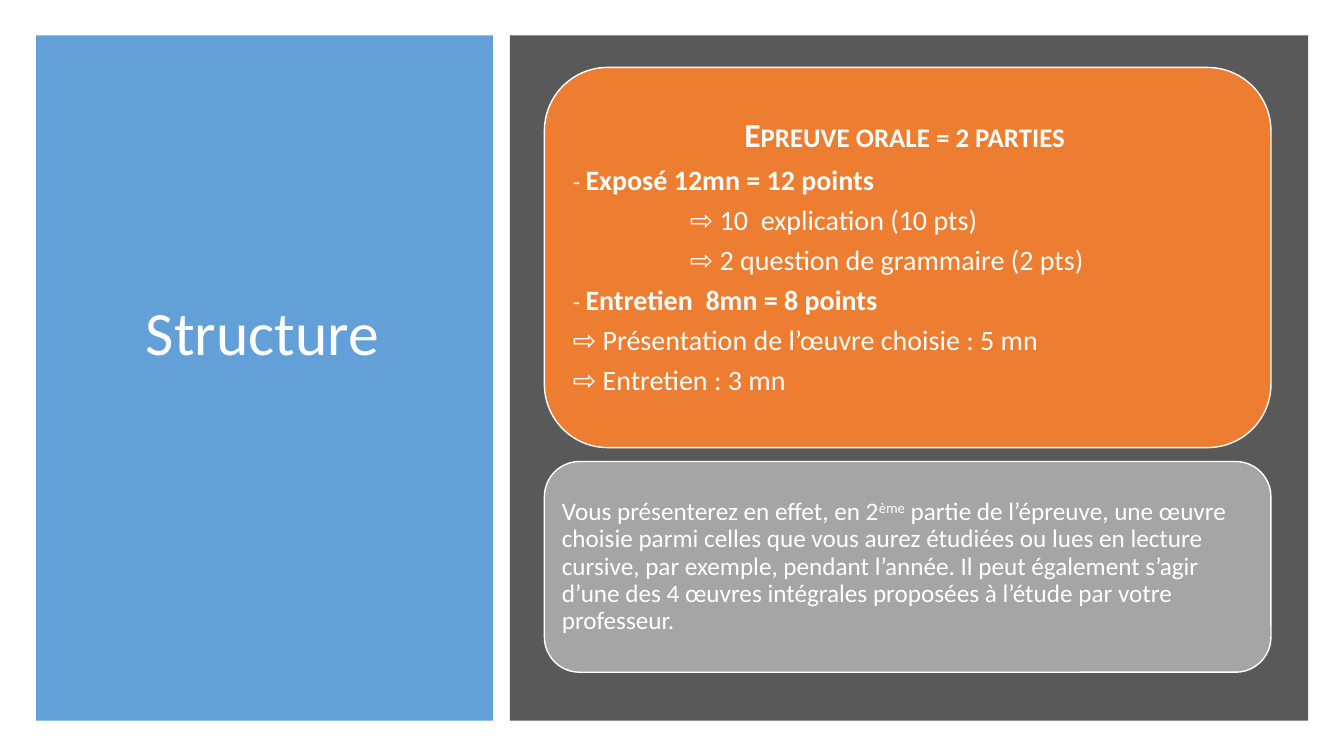
from pptx import Presentation
from pptx import util as u
from pptx.dml import color
from pptx.enum import shapes, text
from pptx.oxml import xmlchemy

COLORS = {
    "white": "FFFFFF",
    "blue": "5B9BD5",
    "dark": "595959",
    "orange": "ED7D31",
    "grey": "A5A5A5",
}


class SlideBuilder:
    font = "Calibri"
    line_spacing = 0.9

    def __init__(self, slide):
        self.slide = slide

    def rgb(self, name):
        return color.RGBColor.from_string(COLORS[name])

    def box(self, left, top, width, height, fill, rounded=False, opacity=None):
        kind = shapes.MSO_SHAPE.ROUNDED_RECTANGLE if rounded else shapes.MSO_SHAPE.RECTANGLE
        shape = self.slide.shapes.add_shape(
            kind, u.Cm(left), u.Cm(top), u.Cm(width), u.Cm(height))
        shape.shadow.inherit = False
        shape.fill.solid()
        shape.fill.fore_color.rgb = self.rgb(fill)
        if opacity is not None:
            alpha = xmlchemy.OxmlElement("a:alpha")
            alpha.set("val", str(opacity * 1000))
            shape.fill._xPr.solidFill[0].append(alpha)
        if rounded:
            shape.line.color.rgb = self.rgb("white")
            shape.line.width = u.Pt(1)
        else:
            shape.line.fill.background()
        return shape

    def label(self, left, top, width, height):
        return self.slide.shapes.add_textbox(
            u.Cm(left), u.Cm(top), u.Cm(width), u.Cm(height))

    def frame(self, shape, inset, bottom=None):
        frame = shape.text_frame
        frame.word_wrap = True
        frame.vertical_anchor = text.MSO_ANCHOR.MIDDLE
        frame.margin_left = frame.margin_right = frame.margin_top = u.Cm(inset)
        frame.margin_bottom = u.Cm(inset if bottom is None else bottom)
        return frame

    def paragraph(self, frame, runs, centered=False, indent=0, after=0):
        paragraph = frame.paragraphs[0]
        if paragraph.runs:
            paragraph = frame.add_paragraph()
        paragraph.alignment = text.PP_ALIGN.CENTER if centered else text.PP_ALIGN.LEFT
        paragraph.line_spacing = self.line_spacing
        paragraph.space_after = u.Pt(after)
        if indent:
            properties = paragraph._p.get_or_add_pPr()
            properties.set("marL", str(u.Cm(indent)))
            properties.set("indent", "0")
        for content, size, bold, extra in runs:
            run = paragraph.add_run()
            run.text = content
            run.font.name = self.font
            run.font.size = u.Pt(size)
            run.font.bold = bold
            run.font.color.rgb = self.rgb("white")
            for key, value in extra.items():
                run.font._element.set(key, value)


def main():
    presentation = Presentation()
    presentation.slide_width = u.Cm(33.87)
    presentation.slide_height = u.Cm(19.05)
    builder = SlideBuilder(presentation.slides.add_slide(presentation.slide_layouts[6]))

    builder.box(0.91, 0.89, 11.51, 17.27, "blue", opacity=95)
    title = builder.frame(builder.label(1.45, 1.63, 10.34, 15.34), 0.13, bottom=1.83)
    builder.paragraph(title, [("Structure", 44, False, {})], centered=True)

    builder.box(12.85, 0.89, 20.12, 17.27, "dark")

    exam = builder.frame(builder.box(13.72, 1.7, 18.31, 9.58, "orange", rounded=True), 0.25)
    builder.paragraph(exam, [("Epreuve orale = 2 parties ", 24, True, {"cap": "small"})],
                      centered=True, after=8.4)
    parts = [
        ("Exposé 12mn = 12 points", 2.95,
         ["10  explication (10 pts)", "2 question de grammaire (2 pts)"]),
        ("Entretien  8mn = 8 points", 0,
         ["Présentation de l’œuvre choisie : 5 mn", "Entretien : 3 mn"]),
    ]
    for heading, indent, details in parts:
        builder.paragraph(exam, [("- ", 17, False, {}), (heading, 20, True, {})], after=7)
        for detail in details:
            builder.paragraph(exam, [("⇨ " + detail, 20, False, {})], indent=indent, after=7)

    note = builder.frame(builder.box(13.72, 11.63, 18.31, 5.31, "grey", rounded=True), 0.18)
    builder.paragraph(note, [
        ("Vous présenterez en effet, en 2", 18, False, {}),
        ("ème", 18, False, {"baseline": "30000"}),
        (" partie de l’épreuve, une œuvre choisie parmi celles que vous aurez étudiées "
         "ou lues en lecture cursive, par exemple, pendant l’année. Il peut également "
         "s’agir d’une des 4 œuvres intégrales proposées à l’étude par votre professeur.",
         18, False, {}),
    ], after=6.3)

    presentation.save("out.pptx")


if __name__ == "__main__":
    main()
